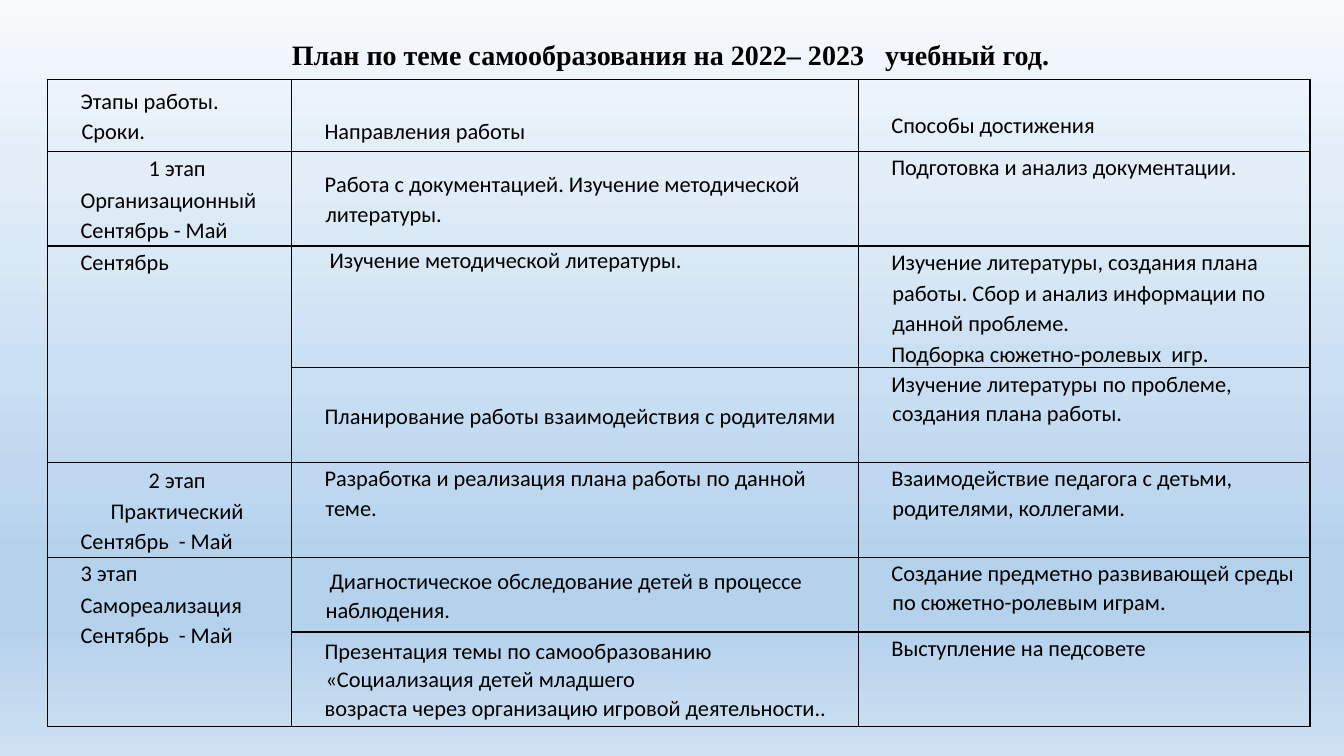
import pptx
import pptx.dml.color
import pptx.enum.dml
import pptx.enum.text
import pptx.oxml
import pptx.oxml.ns
import pptx.util
from lxml import etree

Pt = pptx.util.Pt
RGBColor = pptx.dml.color.RGBColor
LEFT = pptx.enum.text.PP_ALIGN.LEFT
CENTER = pptx.enum.text.PP_ALIGN.CENTER
JUSTIFY = pptx.enum.text.PP_ALIGN.JUSTIFY
TOP = pptx.enum.text.MSO_ANCHOR.TOP
MIDDLE = pptx.enum.text.MSO_ANCHOR.MIDDLE

BLACK = RGBColor(0x00, 0x00, 0x00)
BACKGROUND_STOPS = [
    (0, RGBColor(0xF7, 0xFA, 0xFD)),
    (22, RGBColor(0xE3, 0xEE, 0xF8)),
    (32, RGBColor(0xDA, 0xE9, 0xF6)),
    (50, RGBColor(0xCA, 0xDF, 0xF2)),
    (62, RGBColor(0xBF, 0xD8, 0xEF)),
    (74, RGBColor(0xB5, 0xD2, 0xEC)),
    (83, RGBColor(0xB5, 0xD2, 0xEC)),
    (100, RGBColor(0xCE, 0xE1, 0xF2)),
]

TITLE = "План по теме самообразования на 2022– 2023   учебный год."
TITLE_BOX = (82.1, 21.6, 835.9, 31.7)
TABLE_ORIGIN = (33.8, 56.9)
COLUMN_WIDTHS = [174.3, 404.9, 322.8]
ROW_HEIGHTS = [51.1, 67.7, 87.1, 67.7, 67.7, 53.3, 67.7]
RIGHT_MARGINS = [9, 9, 2.9]
TOP_MARGIN = 0.7
HEADER_TOP_MARGIN = 21.6
MERGED_ROWS = [(2, 3), (5, 6)]
LINE_SPACING = 1.07

# PLAN_PLACEHOLDER
PLAN = [
    [
        (MIDDLE, [("Этапы работы. Сроки.",)]),
        (MIDDLE, [("Направления работы",)]),
        (TOP, [("Способы достижения",)]),
    ],
    [
        (MIDDLE, [("1 этап ", CENTER, 1.6), ("Организационный ", JUSTIFY, 0.9), ("Сентябрь - Май",)]),
        (MIDDLE, [("Работа с документацией. Изучение методической литературы.",)]),
        (TOP, [("Подготовка и анализ документации.",)]),
    ],
    [
        (TOP, [("Сентябрь",)]),
        (TOP, [(" Изучение методической литературы.", LEFT, 7.3, 0.98)]),
        (MIDDLE, [
            ("Изучение литературы, создания плана работы. Сбор и анализ информации по данной проблеме.",
             LEFT, 0.8, 1.1),
            ("Подборка сюжетно-ролевых  игр.", LEFT, 0, 1.11),
        ]),
    ],
    [
        None,
        (MIDDLE, [("Планирование работы взаимодействия с родителями",)]),
        (TOP, [("Изучение литературы по проблеме, создания плана работы.",)]),
    ],
    [
        (MIDDLE, [("2 этап ", CENTER, 1.4), ("Практический ", CENTER, 0.9), ("Сентябрь  - Май",)]),
        (TOP, [("Разработка и реализация плана работы по данной теме.",)]),
        (TOP, [("Взаимодействие педагога с детьми, родителями, коллегами.",)]),
    ],
    [
        (TOP, [("3 этап", LEFT, 1.7), ("Самореализация", LEFT, 1), ("Сентябрь  - Май",)]),
        (MIDDLE, [(" Диагностическое обследование детей в процессе наблюдения.",)]),
        (TOP, [("Создание предметно развивающей среды по сюжетно-ролевым играм.",)]),
    ],
    [
        None,
        (MIDDLE, [
            ("Презентация темы по самообразованию «Социализация детей младшего", LEFT, 0, 1.04),
            ("возраста через организацию игровой деятельности..",),
        ]),
        (TOP, [("Выступление на педсовете",)]),
    ],
]


def add_child(parent, tag, **attributes):
    child = etree.SubElement(parent, pptx.oxml.ns.qn(tag))
    for name, value in attributes.items():
        child.set(name, str(value))
    return child


def paint_background(slide):
    fill = slide.background.fill
    fill.gradient()
    fill.gradient_angle = 270
    stop_list = next(slide.element.iter(pptx.oxml.ns.qn("a:gsLst")))
    for stop in list(stop_list):
        stop_list.remove(stop)
    for percent, color in BACKGROUND_STOPS:
        stop = add_child(stop_list, "a:gs", pos=percent * 1000)
        add_child(stop, "a:srgbClr", val=color)


def format_paragraph(paragraph, text, font_name, size, bold=False,
                     alignment=LEFT, space_after=0, line_spacing=LINE_SPACING):
    paragraph.text = text
    paragraph.alignment = alignment
    paragraph.line_spacing = line_spacing
    paragraph.space_before = Pt(0)
    paragraph.space_after = Pt(space_after)
    properties = paragraph._p.get_or_add_pPr()
    properties.set("marL", str(Pt(18.7)))
    properties.set("indent", str(Pt(-0.7)))
    for run in paragraph.runs:
        run.font.name = font_name
        run.font.size = Pt(size)
        run.font.bold = bold
        run.font.color.rgb = BLACK


def add_borders(cell):
    properties = cell._tc.get_or_add_tcPr()
    for position, tag in enumerate(("a:lnL", "a:lnR", "a:lnT", "a:lnB")):
        line = add_child(properties, tag, w=Pt(1))
        add_child(add_child(line, "a:solidFill"), "a:srgbClr", val=BLACK)
        properties.insert(position, line)


def fill_cell(cell, anchor, paragraphs, top_margin, right_margin):
    cell.vertical_anchor = anchor
    cell.margin_left = Pt(5.8)
    cell.margin_right = Pt(right_margin)
    cell.margin_top = Pt(top_margin)
    cell.margin_bottom = Pt(0)
    text_frame = cell.text_frame
    for index, (text, *layout) in enumerate(paragraphs):
        paragraph = text_frame.add_paragraph() if index else text_frame.paragraphs[0]
        format_paragraph(paragraph, text, "Calibri", 16, False, *layout)


def add_title(slide):
    title = slide.shapes.title
    title.left, title.top, title.width, title.height = map(Pt, TITLE_BOX)
    text_frame = title.text_frame
    text_frame.word_wrap = True
    text_frame.auto_size = pptx.enum.text.MSO_AUTO_SIZE.SHAPE_TO_FIT_TEXT
    text_frame.vertical_anchor = TOP
    text_frame.margin_left = Pt(7.2)
    text_frame.margin_right = Pt(67)
    text_frame.margin_top = text_frame.margin_bottom = Pt(3.6)
    format_paragraph(text_frame.paragraphs[0], TITLE, "Times New Roman", 20, True, CENTER)


def add_plan_table(slide):
    left, top = TABLE_ORIGIN
    frame = slide.shapes.add_table(
        len(ROW_HEIGHTS), len(COLUMN_WIDTHS), Pt(left), Pt(top),
        Pt(sum(COLUMN_WIDTHS)), Pt(sum(ROW_HEIGHTS)))
    table = frame.table
    table.first_row = False
    table.horz_banding = False
    for column, width in zip(table.columns, COLUMN_WIDTHS):
        column.width = Pt(width)
    for row, height in zip(table.rows, ROW_HEIGHTS):
        row.height = Pt(height)
    for first, last in MERGED_ROWS:
        table.cell(first, 0).merge(table.cell(last, 0))
    for row_index, row in enumerate(PLAN):
        for column_index, content in enumerate(row):
            cell = table.cell(row_index, column_index)
            cell.fill.background()
            add_borders(cell)
            if content:
                lowered = row_index == 0 and column_index > 0
                top_margin = HEADER_TOP_MARGIN if lowered else TOP_MARGIN
                fill_cell(cell, *content, top_margin, RIGHT_MARGINS[column_index])


def main():
    presentation = pptx.Presentation()
    presentation.slide_width = Pt(960)
    presentation.slide_height = Pt(540)
    slide = presentation.slides.add_slide(presentation.slide_layouts[5])
    paint_background(slide)
    add_title(slide)
    add_plan_table(slide)
    presentation.save("out.pptx")


if __name__ == "__main__":
    main()
